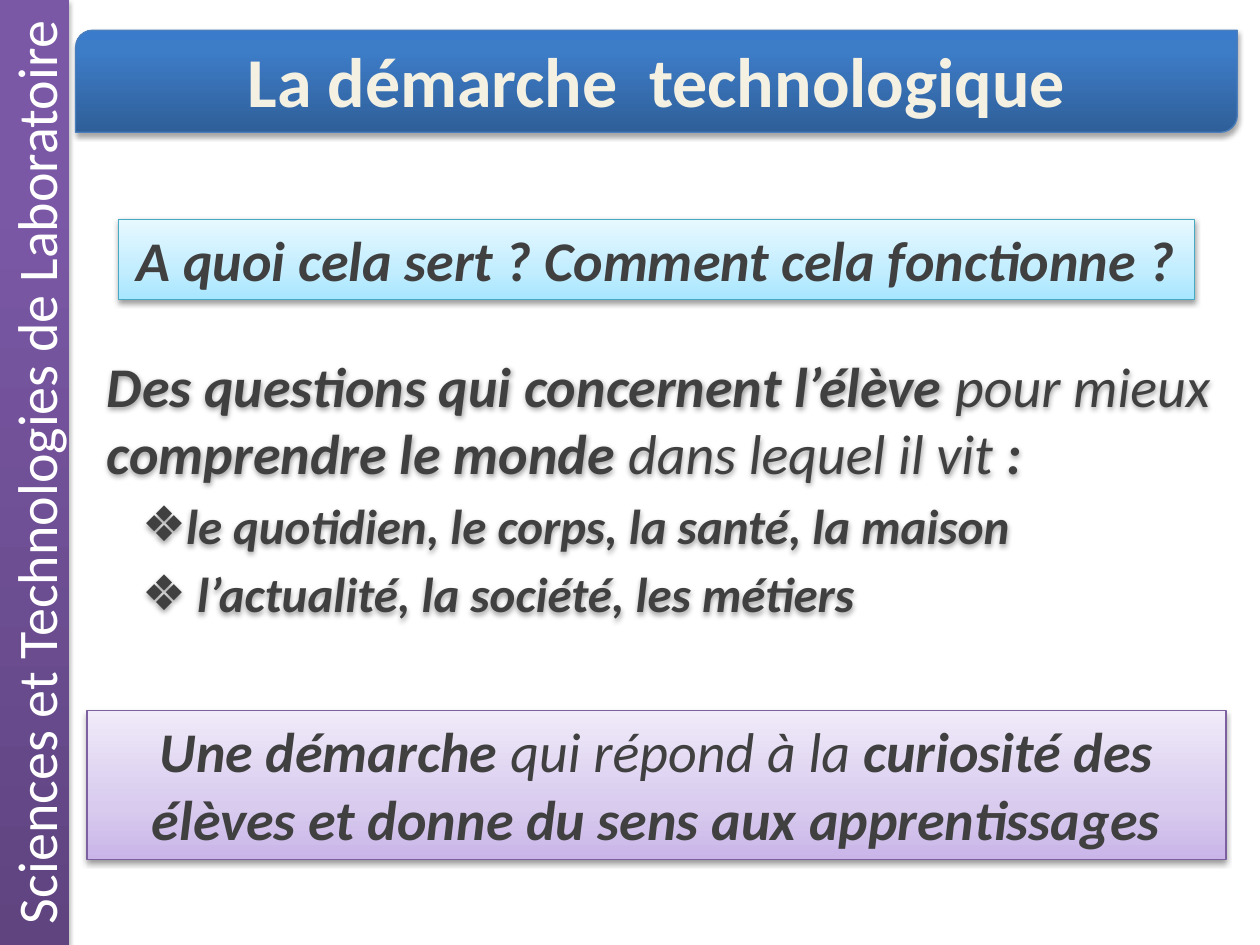
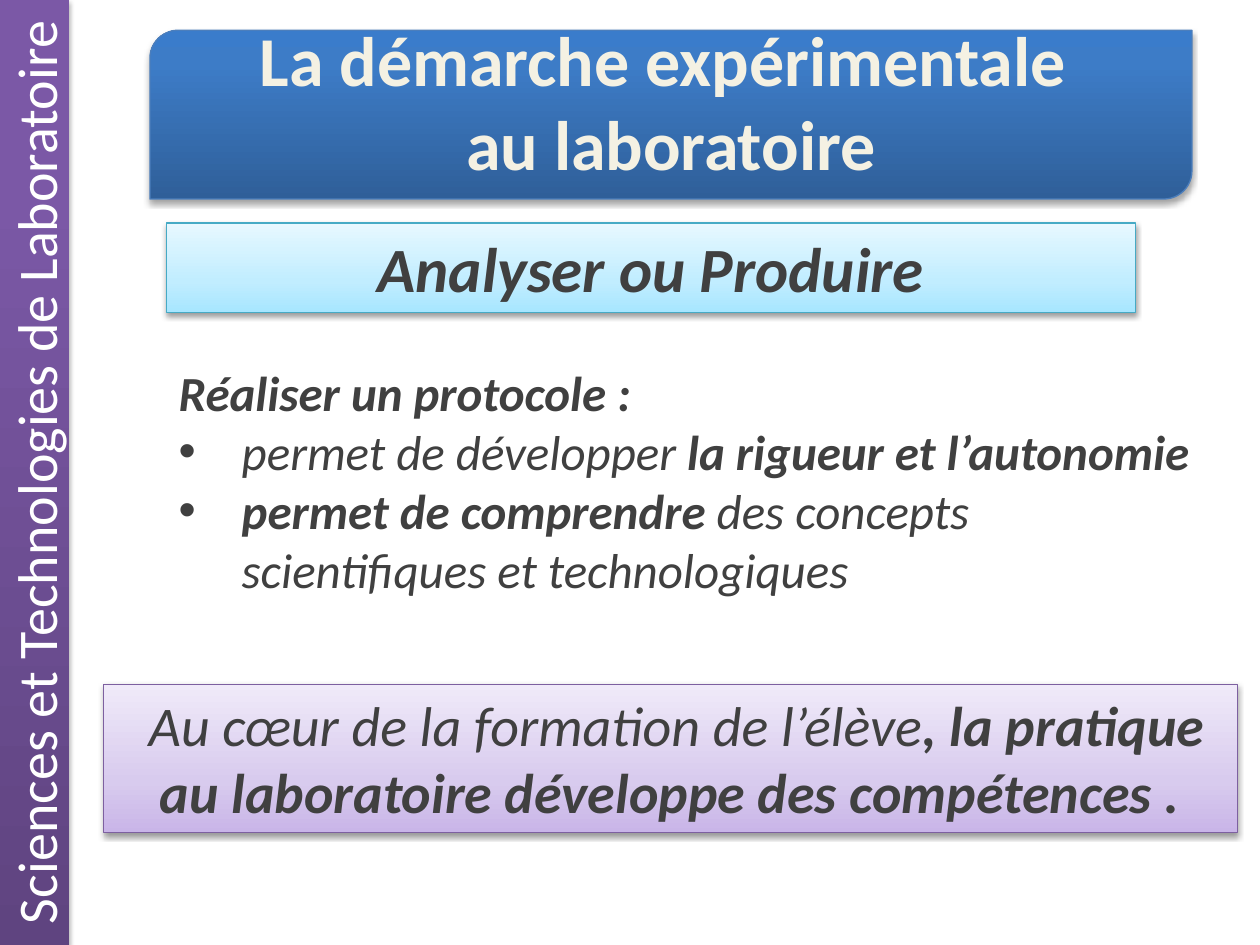
from lxml.etree import SubElement as Sub
from pptx import Presentation
from pptx.dml.color import RGBColor
from pptx.enum.shapes import MSO_SHAPE as Kind
from pptx.enum.text import MSO_ANCHOR as Anchor, MSO_AUTO_SIZE as Fit, PP_ALIGN as Align
from pptx.oxml.ns import qn
from pptx.util import Inches, Pt

FONT = "Calibri"
DARK, CREAM, WHITE = "404040", "F4F1E3", "FFFFFF"
# Gradient stops run from the bottom edge to the top edge.
BLUE = [(0, "2F5F99"), (80, "3D7CC7"), (100, "3A7CCB")]
VIOLET = [(0, "5F4480"), (80, "7B58A6"), (100, "7C57A8")]
CYAN = [(0, "A7E6FF"), (35, "C1EDFF"), (100, "E7F8FF")]
LILAC = [(0, "C9B5E8"), (35, "D8CBEE"), (100, "F0EAF9")]


def color(code):
    return RGBColor.from_string(code)


def shade(shape, alpha, dist):
    """Give the shape a soft black shadow that falls straight down."""
    shape.shadow.inherit = False
    effects = shape.element.spPr.find(qn("a:effectLst"))
    outer = Sub(effects, qn("a:outerShdw"), blurRad=str(Pt(3.1)),
                dist=str(Pt(dist)), dir="5400000", rotWithShape="0")
    black = Sub(outer, qn("a:srgbClr"), val="000000")
    Sub(black, qn("a:alpha"), val=str(alpha * 1000))


def blend(shape, stops):
    """Fill the shape with a vertical gradient."""
    shape.fill.gradient()
    shape.fill.gradient_angle = 90
    holder = next(shape.element.spPr.iter(qn("a:gsLst")))
    for old in list(holder):
        holder.remove(old)
    for place, code in stops:
        stop = Sub(holder, qn("a:gs"), pos=str(place * 1000))
        Sub(stop, qn("a:srgbClr"), val=code)


def panel(slide, box, stops, edge=None, kind=Kind.RECTANGLE, alpha=35, dist=1.8):
    shape = slide.shapes.add_shape(kind, *map(Inches, box))
    blend(shape, stops)
    if edge:
        shape.line.color.rgb = color(edge)
        shape.line.width = Pt(0.75)
    else:
        shape.line.fill.background()
    shade(shape, alpha, dist)
    shape.text_frame.word_wrap = True
    return shape


def write(para, text, size, ink=DARK, italic=True, align=Align.LEFT):
    """Write text in which the parts between stars are bold."""
    para.alignment = align
    font = para.font
    font.name, font.size, font.italic = FONT, Pt(size), italic
    font.color.rgb = color(ink)
    parts = [(part, i % 2 == 1) for i, part in enumerate(text.split("*")) if part]
    if len(parts) == 1:
        font.bold = parts[0][1]
    for part, bold in parts:
        run = para.add_run()
        run.text = part
        if len(parts) > 1:
            run.font.bold = bold


def dot(para, mark, left, hang):
    """Put a bullet before the paragraph, with a hanging indent."""
    props = para._p.get_or_add_pPr()
    props.set("marL", str(Inches(left)))
    props.set("indent", str(-Inches(hang)))
    bullet = props.makeelement(qn("a:buChar"), {"char": mark})
    face = props.makeelement(qn("a:buFont"), {"typeface": "Arial"})
    props.insert_element_before(face, "a:defRPr")
    props.insert_element_before(bullet, "a:defRPr")


def band(slide):
    shape = panel(slide, (0, 0, 0.55, 7.5), VIOLET)
    shape.element.txBody.bodyPr.set("vert", "vert270")
    write(shape.text_frame.paragraphs[0], "Sciences et Technologies de Laboratoire",
          32, WHITE, False, Align.CENTER)


def title(slide, box, lines):
    shape = panel(slide, box, BLUE, "4B7EBC", Kind.ROUND_2_DIAG_RECTANGLE)
    frame = shape.text_frame
    frame.vertical_anchor = Anchor.BOTTOM
    for i, line in enumerate(lines):
        para = frame.add_paragraph() if i else frame.paragraphs[0]
        write(para, f"*{line}*", 40, CREAM, False, Align.CENTER)


def callout(slide, box, text, stops, edge, size=32):
    frame = panel(slide, box, stops, edge, alpha=38, dist=1.6).text_frame
    frame.vertical_anchor = Anchor.TOP
    frame.auto_size = Fit.SHAPE_TO_FIT_TEXT
    write(frame.paragraphs[0], text, size, align=Align.CENTER)


def body(slide, box, lead, size, items, mark, left, hang, gap=0):
    """Add a lead sentence followed by 28-point bullets."""
    shape = slide.shapes.add_textbox(*map(Inches, box))
    frame = shape.text_frame
    frame.word_wrap = True
    write(frame.paragraphs[0], lead, size)
    for item in items:
        para = frame.add_paragraph()
        write(para, item, 28)
        dot(para, mark, left, hang)
    for para in frame.paragraphs:
        para.space_before = Pt(gap)
    return shape


def techno(slide):
    band(slide)
    title(slide, (0.6, 0.24, 9.22, 0.81), ["La démarche  technologique"])
    text = body(slide, (0.75, 2.74, 9.27, 2.4),
                "*Des questions qui concernent l’élève *pour mieux "
                "*comprendre le monde *dans lequel il vit *:*", 32,
                ["*le quotidien, le corps, la santé, la maison*",
                 "* l’actualité, la société, les métiers*"],
                "❖", 0.59, 0.31, 5.5)
    shade(text, 38, 1.6)
    callout(slide, (0.94, 1.74, 8.54, 0.64),
            "*A quoi cela sert ? Comment cela fonctionne ? *", CYAN, "46AAC5")
    callout(slide, (0.69, 5.64, 9.04, 1.18),
            "*Une démarche *qui répond à la *curiosité des élèves "
            "et donne du sens aux apprentissages*", LILAC, "7D60A0")


def lab(slide):
    band(slide)
    callout(slide, (1.32, 1.77, 7.69, 0.71), "*Analyser ou Produire*",
            CYAN, "46AAC5", 36)
    title(slide, (1.19, 0.24, 8.27, 1.34),
          ["La démarche expérimentale ", "au laboratoire"])
    body(slide, (1.32, 2.83, 8.38, 1.99), "*Réaliser un protocole :*", 28,
         ["permet de développer *la rigueur et l’autonomie*",
          "*permet de comprendre *des concepts scientifiques et technologiques"],
         "•", 0.5, 0.5)
    callout(slide, (0.82, 5.43, 9, 1.18),
            " Au cœur de la formation de l’élève*, la pratique au laboratoire "
            "développe des compétences .*", LILAC, "7D60A0")


def main():
    deck = Presentation()
    deck.slide_width, deck.slide_height = Inches(10), Inches(7.5)
    for draw in (techno, lab):
        draw(deck.slides.add_slide(deck.slide_layouts[6]))
    deck.save("out.pptx")


if __name__ == "__main__":
    main()
